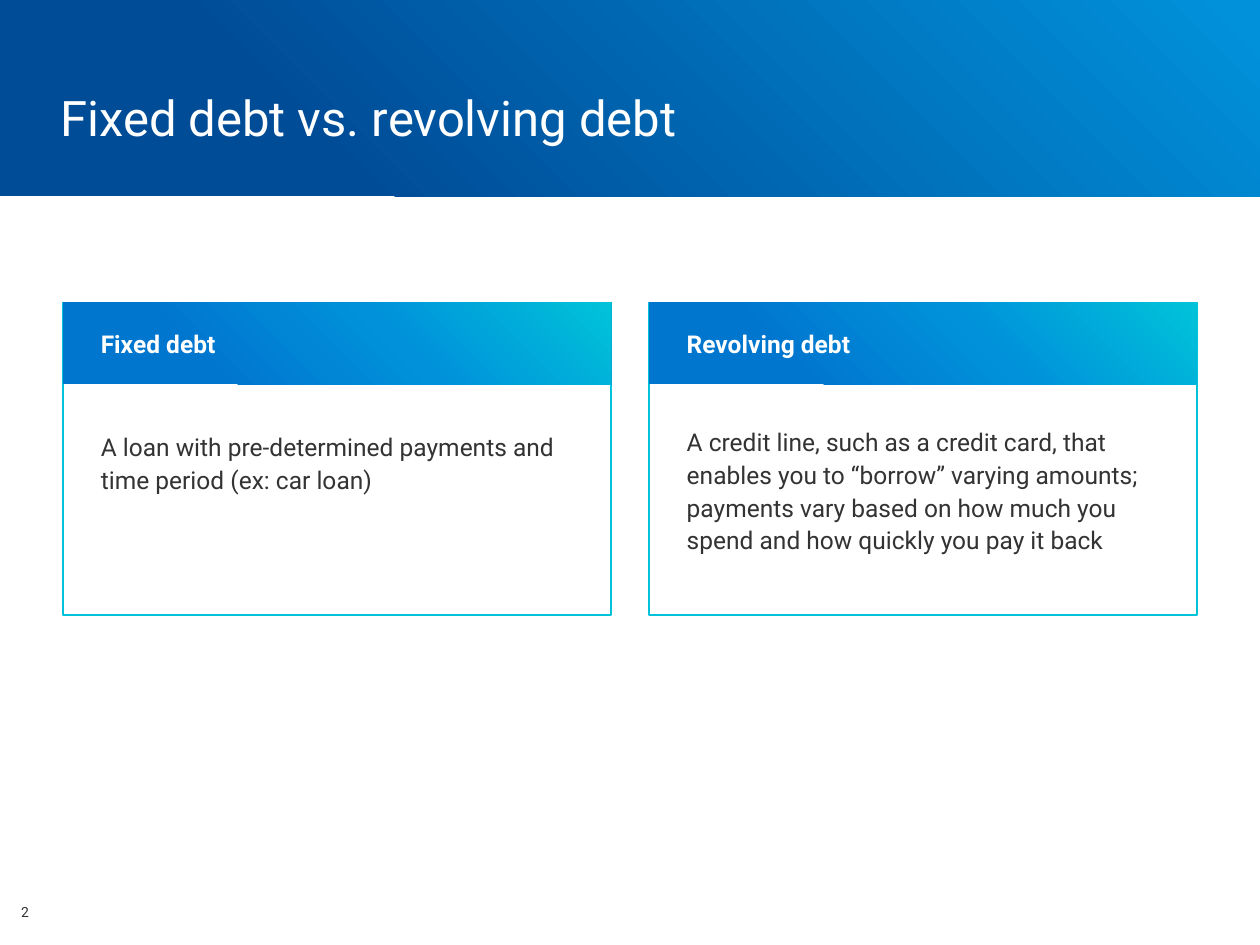
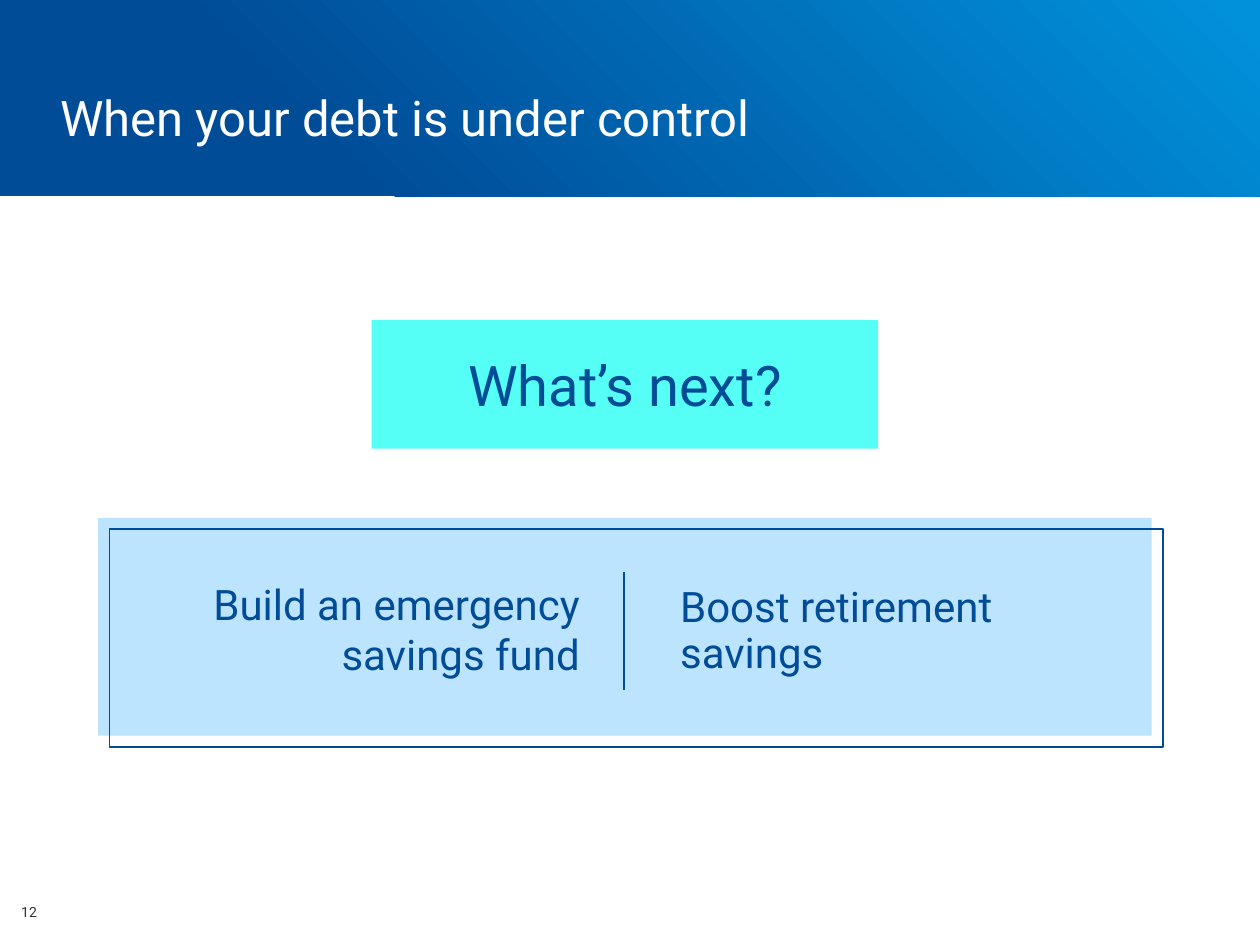
"""Build two slides on kinds of debt and on what follows once debt is under control."""
from copy import deepcopy
from dataclasses import dataclass

from lxml import etree
from pptx import Presentation
from pptx.dml.color import RGBColor
from pptx.enum.shapes import MSO_CONNECTOR, MSO_SHAPE
from pptx.enum.text import MSO_ANCHOR, PP_ALIGN
from pptx.oxml.ns import qn
from pptx.util import Inches, Pt

RECTANGLE = MSO_SHAPE.RECTANGLE
STRAIGHT = MSO_CONNECTOR.STRAIGHT
TOP, MIDDLE = MSO_ANCHOR.TOP, MSO_ANCHOR.MIDDLE
LEFT, CENTER, RIGHT = PP_ALIGN.LEFT, PP_ALIGN.CENTER, PP_ALIGN.RIGHT


@dataclass(frozen=True)
class Theme:
    font: str = "Roboto"
    white: str = "FFFFFF"
    ink: str = "333333"
    navy: str = "004C97"
    teal: str = "00C3D9"
    aqua: str = "55FFF5"
    pale: str = "BDE4FE"
    band: tuple = ((0.25, "004C97"), (0.98, "0091DA"))
    header: tuple = ((0.25, "0076CF"), (0.6, "0091DA"), (1, "00C3D9"))
    number_size: int = 8
    body_size: int = 14
    goal_size: int = 24
    title_size: int = 28
    question_size: int = 32
    line_width: int = 1


theme = Theme()
deck = Presentation()
deck.slide_width, deck.slide_height = Inches(10), Inches(7.5)
CELL = deck.slide_width / 100


def add_box(page, area, fill=None, line=None):
    """Place a box given in grid cells: a text box, or a rectangle if it has fill or line."""
    place = [round(cells * CELL) for cells in area]
    if fill is None and line is None:
        return page.shapes.add_textbox(*place)
    box = page.shapes.add_shape(RECTANGLE, *place)
    box.shadow.inherit = False
    if fill is None:
        box.fill.background()
    elif isinstance(fill, str):
        box.fill.solid()
        box.fill.fore_color.rgb = RGBColor.from_string(fill)
    else:
        box.fill.gradient()
        box.fill.gradient_angle = 45
        stop_list = box.element.spPr.find(".//" + qn("a:gsLst"))
        for _ in fill[2:]:
            stop_list.append(deepcopy(stop_list[0]))
        for stop, (position, color) in zip(box.fill.gradient_stops, fill):
            stop.position = position
            stop.color.rgb = RGBColor.from_string(color)
    if line is None:
        box.line.fill.background()
    else:
        box.line.color.rgb = RGBColor.from_string(line)
        box.line.width = Pt(theme.line_width)
    return box


def write(box, text, size, color, align=LEFT, anchor=TOP, insets=(1, 0.5, 1, 0.5), bold=False):
    """Fill a box with one paragraph and return it; insets are left, top, right, bottom."""
    frame = box.text_frame
    frame.word_wrap = True
    frame.vertical_anchor = anchor
    (frame.margin_left, frame.margin_top,
     frame.margin_right, frame.margin_bottom) = [round(cells * CELL) for cells in insets]
    para = frame.paragraphs[0]
    para.text = text
    para.alignment = align
    para.font.name = theme.font
    para.font.size = Pt(size)
    para.font.bold = bold
    para.font.color.rgb = RGBColor.from_string(color)
    return para


pages = []
for number, title in (("2", "Fixed debt vs. revolving debt"),
                      ("12", "When your debt is under control")):
    page = deck.slides.add_slide(deck.slide_layouts[6])
    write(add_box(page, (0.7, 71.2, 37.1, 2.4)), number, theme.number_size, theme.ink)
    add_box(page, (0, 0, 100, 15.6), theme.band)
    write(add_box(page, (4.8, 6.8, 64.3, 5)), title, theme.title_size, theme.white,
          anchor=MIDDLE, insets=(0, 0, 0, 0))
    pages.append(page)
comparison, next_steps = pages

cards = (
    ("Fixed debt", 10,
     "A loan with pre-determined payments and time period (ex: car loan)"),
    ("Revolving debt", 9.6,
     "A credit line, such as a credit card, that enables you to “borrow” varying amounts; "
     "payments vary based on how much you spend and how quickly you pay it back"),
)
card_top, card_width, card_gap, card_inset = 24, 43.5, 3, 3
for index, (heading, text_top, description) in enumerate(cards):
    card_left = 5 + index * (card_width + card_gap)
    card = add_box(comparison, (card_left, card_top, card_width, 24.8), theme.white, theme.teal)
    para = write(card, description, theme.body_size, theme.ink,
                 insets=(card_inset, text_top, card_inset, card_inset))
    para.line_spacing = Pt(18.8)
    header = add_box(comparison, (card_left, card_top, card_width, 6.5), theme.header)
    write(header, heading, theme.body_size, theme.white, anchor=MIDDLE,
          insets=(card_inset, 0.5, card_inset, 0.5), bold=True)

question = add_box(next_steps, (29.5, 25.4, 40.2, 10.2), theme.aqua)
write(question, "What’s next?", theme.question_size, theme.navy, CENTER, MIDDLE)

panel_left, panel_top, panel_size, frame_offset = 7.8, 41.1, (83.6, 17.3), 0.9
add_box(next_steps, (panel_left, panel_top, *panel_size), theme.pale)
retirement = write(add_box(next_steps, (53, 43.6, 38.3, 13.1)), "Boost retirement savings",
                   theme.goal_size, theme.navy, anchor=MIDDLE)
retirement.line_spacing = 0.9
write(add_box(next_steps, (8.7, 45.4, 38.3, 9.1)), "Build an emergency savings fund",
      theme.goal_size, theme.navy, RIGHT)

divider = next_steps.shapes.add_connector(
    STRAIGHT, *[round(cells * CELL) for cells in (49.5, 45.4, 49.5, 54.8)])
divider.line.color.rgb = RGBColor.from_string(theme.navy)
divider.line.width = Pt(theme.line_width)
etree.SubElement(divider._element.spPr, qn("a:effectLst"))

add_box(next_steps, (panel_left + frame_offset, panel_top + frame_offset, *panel_size),
        line=theme.navy)

deck.save("out.pptx")
